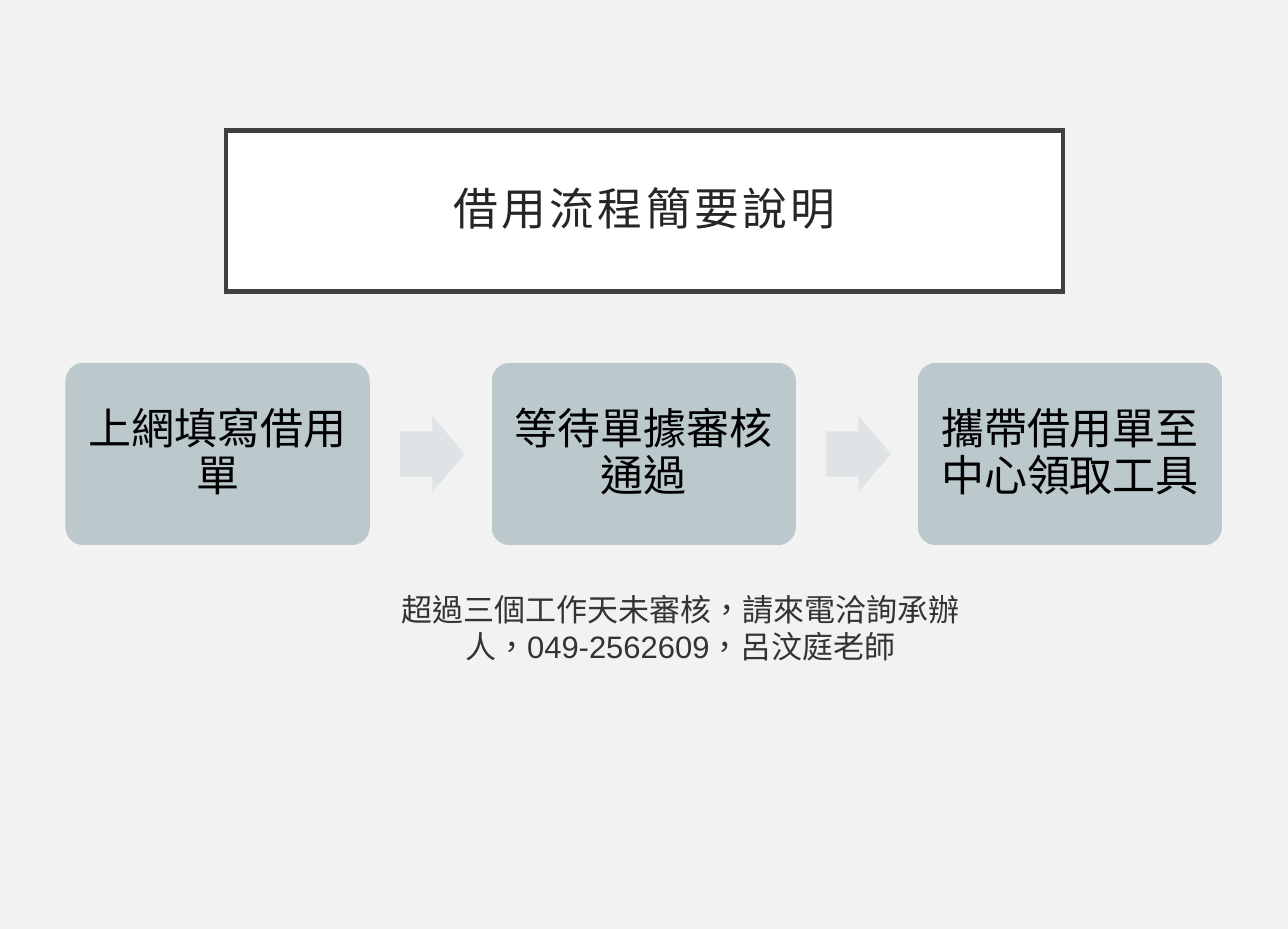
from lxml.etree import SubElement
from pptx import Presentation
from pptx.dml.color import RGBColor
from pptx.enum.shapes import MSO_SHAPE
from pptx.enum.text import MSO_ANCHOR, PP_ALIGN
from pptx.oxml.ns import qn
from pptx.util import Cm, Pt

BACKGROUND = RGBColor(0xF2, 0xF2, 0xF2)
WHITE = RGBColor(0xFF, 0xFF, 0xFF)
BLACK = RGBColor(0x00, 0x00, 0x00)
FRAME = RGBColor(0x40, 0x40, 0x40)
TITLE_TEXT = RGBColor(0x26, 0x26, 0x26)
NOTE_TEXT = RGBColor(0x33, 0x33, 0x33)
STEP_COLORS = (RGBColor(0xBB, 0xC8, 0xCC), RGBColor(0xB8, 0xC6, 0xCB))
ARROW_COLORS = (RGBColor(0xDE, 0xE4, 0xE5), RGBColor(0xDD, 0xE3, 0xE5))

STEPS = ("上網填寫借用單", "等待單據審核通過", "攜帶借用單至中心領取工具")
FLOW_LEFT, FLOW_TOP = 1.34, 7.44
STEP_WIDTH, STEP_HEIGHT = 6.24, 3.74
STEP_PITCH = STEP_WIDTH * 1.4
ARROW_OFFSET = STEP_WIDTH * 1.1
ARROW_WIDTH, ARROW_HEIGHT = 1.32, 1.55


def write_text(box, text, *, size, color, font="Cabin", margin=None,
               line_spacing=None, letter_spacing=None, anchor=MSO_ANCHOR.MIDDLE):
    frame = box.text_frame
    frame.word_wrap = True
    frame.vertical_anchor = anchor
    if margin is not None:
        frame.margin_left = frame.margin_right = Cm(margin)
        frame.margin_top = frame.margin_bottom = Cm(margin)
    para = frame.paragraphs[0]
    para.alignment = PP_ALIGN.CENTER
    # Keep closing punctuation inside the text area
    para._p.get_or_add_pPr().set("hangingPunct", "0")
    if line_spacing:
        para.line_spacing = line_spacing
    span = para.add_run()
    span.text = text
    span.font.name = font
    span.font.size = Pt(size)
    span.font.color.rgb = color
    properties = span.font._element
    properties.set("lang", "zh-TW")
    if letter_spacing:
        properties.set("spc", str(letter_spacing * 100))


def add_box(page, kind, left, top, width, height):
    box = page.shapes.add_shape(kind, Cm(left), Cm(top), Cm(width), Cm(height))
    box.shadow.inherit = False
    return box


def fill_gradient(box, colors):
    box.fill.gradient()
    box.fill.gradient_angle = 270
    for stop, color in zip(box.fill.gradient_stops, colors):
        stop.color.rgb = color
    box.line.fill.background()


def add_title(page, text):
    box = add_box(page, MSO_SHAPE.RECTANGLE, 4.64, 2.68, 17.15, 3.3)
    box.fill.solid()
    box.fill.fore_color.rgb = WHITE
    box.line.color.rgb = FRAME
    box.line.width = Pt(2.5)
    # Sharp frame corners
    SubElement(box.line._get_or_add_ln(), qn("a:miter"), lim="800000")
    write_text(box, text, size=26, color=TITLE_TEXT, margin=0.5,
               line_spacing=0.9, letter_spacing=2)


def add_step(page, left, text):
    box = add_box(page, MSO_SHAPE.ROUNDED_RECTANGLE, left, FLOW_TOP,
                  STEP_WIDTH, STEP_HEIGHT)
    box.adjustments[0] = 0.1
    fill_gradient(box, STEP_COLORS)
    write_text(box, text, size=25, color=BLACK, margin=0.36, line_spacing=0.9)


def add_arrow(page, left):
    top = FLOW_TOP + (STEP_HEIGHT - ARROW_HEIGHT) / 2
    arrow = add_box(page, MSO_SHAPE.RIGHT_ARROW, left, top,
                    ARROW_WIDTH, ARROW_HEIGHT)
    arrow.adjustments[0] = 0.6
    arrow.adjustments[1] = 0.5
    fill_gradient(arrow, ARROW_COLORS)


def add_note(page, text):
    box = page.shapes.add_textbox(Cm(7.39), Cm(11.98), Cm(13.11), Cm(1.85))
    write_text(box, text, size=18, color=NOTE_TEXT, font="Arial",
               anchor=MSO_ANCHOR.TOP)


def main():
    deck = Presentation()
    deck.slide_width, deck.slide_height = Cm(26.4), Cm(19.05)
    page = deck.slides.add_slide(deck.slide_layouts[6])
    page.background.fill.solid()
    page.background.fill.fore_color.rgb = BACKGROUND

    add_title(page, "借用流程簡要說明")

    # Borrowing steps with an arrow between neighbours
    for index, text in enumerate(STEPS):
        left = FLOW_LEFT + index * STEP_PITCH
        add_step(page, left, text)
        if index < len(STEPS) - 1:
            add_arrow(page, left + ARROW_OFFSET)

    # Contact for late reviews
    add_note(page, "超過三個工作天未審核，請來電洽詢承辦人，049-2562609，呂汶庭老師")

    deck.save("out.pptx")


if __name__ == "__main__":
    main()
